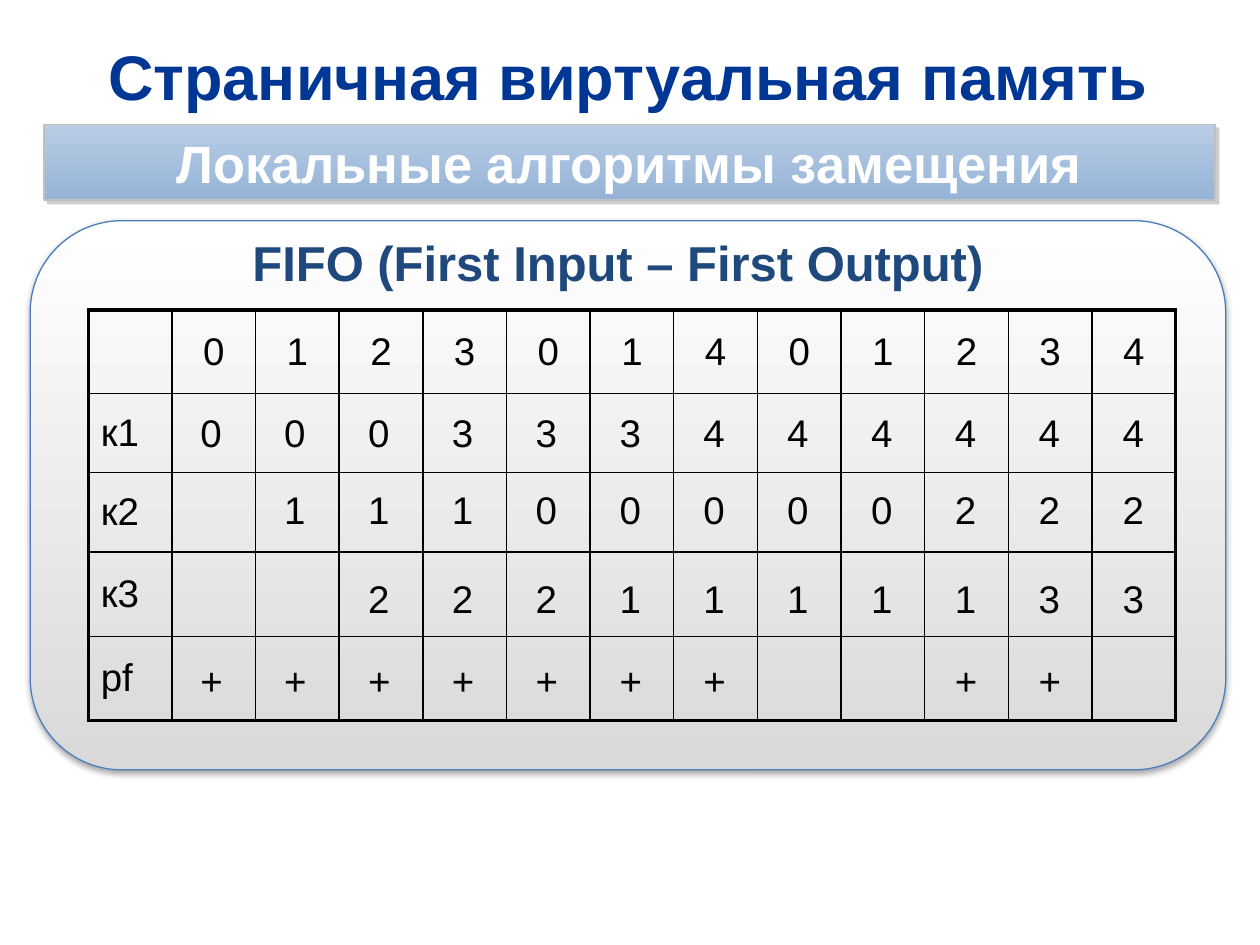
from dataclasses import dataclass
from lxml.etree import SubElement
from pptx import Presentation
from pptx.dml.color import RGBColor as Rgb
from pptx.enum.shapes import MSO_SHAPE as Preset
from pptx.enum.text import MSO_ANCHOR as Anchor, PP_ALIGN as Align
from pptx.oxml.ns import qn
from pptx.util import Cm, Pt


@dataclass(frozen=True)
class Theme:
    font: str = "Arial"
    title: str = "003794"
    heading: str = "1F497D"
    ink: str = "000000"
    paper: str = "FFFFFF"
    panel_end: str = "D9D9D9"
    panel_line: str = "4B7EBC"
    banner_start: str = "B9CDE5"
    banner_end: str = "95B3D7"
    banner_line: str = "C0C0C0"
    banner_shadow: str = "808080"
    title_size: float = 36
    banner_size: float = 30
    heading_size: float = 28
    cell_size: float = 22
    thin: float = 1
    thick: float = 2.25


class SlideBuilder:
    def __init__(self, slide, theme):
        self.slide = slide
        self.theme = theme

    def add_line(self, frame, text, size, color, bold=False, align=Align.LEFT, before=0, after=0):
        paragraph = frame.paragraphs[0]
        paragraph.alignment = align
        paragraph.space_before = Pt(before)
        paragraph.space_after = Pt(after)
        run = paragraph.add_run()
        run.text = text
        run.font.name = self.theme.font
        run.font.size = Pt(size)
        run.font.bold = bold
        run.font.color.rgb = Rgb.from_string(color)

    def add_text(self, box, text, size, color, anchor=Anchor.TOP, **style):
        frame = self.slide.shapes.add_textbox(*map(Cm, box)).text_frame
        frame.word_wrap = True
        frame.vertical_anchor = anchor
        self.add_line(frame, text, size, color, **style)

    def add_gradient_shape(self, preset, box, colors, line, width):
        shape = self.slide.shapes.add_shape(preset, *map(Cm, box))
        shape.fill.gradient()
        shape.fill.gradient_angle = 270
        for stop, color in zip(shape.fill.gradient_stops, colors):
            stop.color.rgb = Rgb.from_string(color)
        shape.line.color.rgb = Rgb.from_string(line)
        shape.line.width = Pt(width)
        shape.shadow.inherit = False
        return shape

    def add_shadow(self, shape, color, opacity, blur, distance, angle):
        effects = shape._element.spPr.find(qn("a:effectLst"))
        outer = SubElement(effects, qn("a:outerShdw"), blurRad=str(Pt(blur)),
                           dist=str(Pt(distance)), dir=str(angle * 60000),
                           algn="tl", rotWithShape="0")
        tint = SubElement(outer, qn("a:srgbClr"), val=color)
        SubElement(tint, qn("a:alpha"), val=str(opacity * 1000))

    def add_borders(self, cell, widths):
        properties = cell._tc.get_or_add_tcPr()
        for position, (side, width) in enumerate(zip("LRTB", widths)):
            edge = SubElement(properties, qn(f"a:ln{side}"), w=str(Pt(width)))
            fill = SubElement(edge, qn("a:solidFill"))
            SubElement(fill, qn("a:srgbClr"), val=self.theme.ink)
            properties.insert(position, edge)

    def add_grid(self, left, top, width, heights, header, labels):
        theme = self.theme
        rows, columns = len(heights), len(header) + 1
        grid = self.slide.shapes.add_table(
            rows, columns, *map(Cm, (left, top, width, sum(heights)))).table
        grid.first_row = grid.horz_banding = False
        for column in grid.columns:
            column.width = Cm(width / columns)
        for r, height in enumerate(heights):
            grid.rows[r].height = Cm(height)
            for c in range(columns):
                cell = grid.cell(r, c)
                cell.vertical_anchor = Anchor.MIDDLE
                cell.fill.background()
                outer = (c == 0, c == columns - 1, r == 0, r == rows - 1)
                self.add_borders(cell, [theme.thick if edge else theme.thin for edge in outer])
                if r == 0 and c > 0:
                    value, align = header[c - 1], Align.CENTER
                elif r > 0 and c == 0:
                    value, align = labels[r - 1], Align.LEFT
                else:
                    continue
                self.add_line(cell.text_frame, value, theme.cell_size, theme.ink,
                              align=align, before=0.2 * theme.cell_size)


def main():
    theme = Theme()
    deck = Presentation()
    deck.slide_width, deck.slide_height = Cm(25.4), Cm(19.05)
    builder = SlideBuilder(deck.slides.add_slide(deck.slide_layouts[6]), theme)

    panel = builder.add_gradient_shape(Preset.ROUNDED_RECTANGLE, (0.61, 4.45, 24.1, 11.07),
                                       (theme.paper, theme.panel_end), theme.panel_line, 0.75)
    builder.add_shadow(panel, theme.ink, 35, 3.1, 1.8, 90)

    builder.add_text((0.61, 0.66, 24.1, 1.73), "Страничная виртуальная память",
                     theme.title_size, theme.title, anchor=Anchor.MIDDLE,
                     bold=True, align=Align.CENTER)

    banner = builder.add_gradient_shape(Preset.RECTANGLE, (0.89, 2.51, 23.6, 1.52),
                                        (theme.banner_start, theme.banner_end),
                                        theme.banner_line, 1)
    builder.add_shadow(banner, theme.banner_shadow, 40, 0, 3, 45)
    frame = banner.text_frame
    frame.margin_left = frame.margin_right = Cm(0.6)
    frame.margin_top = frame.margin_bottom = Cm(0.1)
    frame.vertical_anchor = Anchor.MIDDLE
    builder.add_line(frame, "Локальные алгоритмы замещения", theme.banner_size, theme.paper,
                     bold=True, align=Align.CENTER, after=0.2 * theme.banner_size)

    builder.add_text((1.22, 4.57, 22.48, 1.45), "FIFO (First Input – First Output)",
                     theme.heading_size, theme.heading, bold=True, align=Align.CENTER, after=6)

    page_requests = "012301401234"
    frame_history = {
        "к1": (8.13, "000333444444"),
        "к2": (9.68, " 11100000222"),
        "к3": (11.46, "  2221111133"),
        "pf": (13.13, "+++++++  ++ "),
    }
    builder.add_grid(1.78, 6.25, 21.92, (1.68, 1.6, 1.6, 1.7, 1.7),
                     page_requests, list(frame_history))
    for top, states in frame_history.values():
        for step, state in enumerate(states):
            if state != " ":
                builder.add_text((3.79 + 1.69 * step, top, 1.02, 1.19), state,
                                 theme.cell_size, theme.ink)

    deck.save("out.pptx")


if __name__ == "__main__":
    main()
